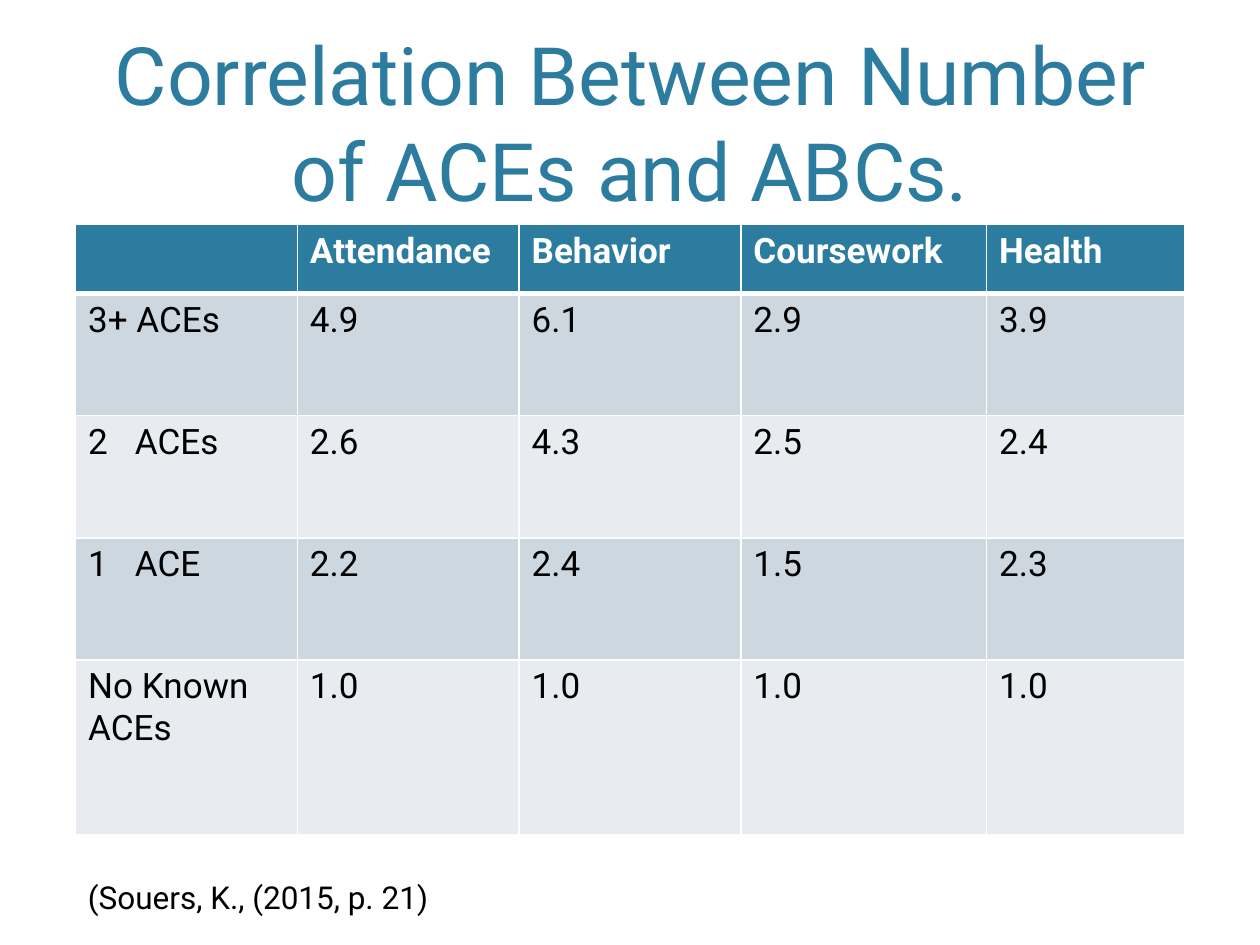
from lxml import etree
from pptx import Presentation
from pptx.dml.color import RGBColor
from pptx.enum.text import MSO_ANCHOR, MSO_AUTO_SIZE, PP_ALIGN
from pptx.oxml.ns import qn
from pptx.util import Inches, Pt

FONT = "Roboto"
TEAL = RGBColor(0x2C, 0x7C, 0x9F)
BAND_DARK = RGBColor(0xCD, 0xD7, 0xDF)
BAND_LIGHT = RGBColor(0xE8, 0xEC, 0xF0)
WHITE = RGBColor(0xFF, 0xFF, 0xFF)
BLACK = RGBColor(0x00, 0x00, 0x00)

LEFT, WIDTH = 0.6, 8.8
COL_WIDTHS = [1.76, 1.76, 1.76, 1.95, 1.57]
ROW_HEIGHTS = [0.55, 0.97, 0.97, 0.97, 1.39]
ROWS = [
    ["", "Attendance", "Behavior", "Coursework", "Health"],
    ["3+ ACEs", "4.9", "6.1", "2.9", "3.9"],
    ["2\tACEs", "2.6", "4.3", "2.5", "2.4"],
    ["1\tACE", "2.2", "2.4", "1.5", "2.3"],
    ["No Known ACEs", "1.0", "1.0", "1.0", "1.0"],
]


def write(tf, text, size, color, bold=False):
    """Put one formatted run in the first paragraph and return the paragraph."""
    p = tf.paragraphs[0]
    r = p.add_run()
    r.text = text
    for name, value in {"name": FONT, "size": Pt(size), "bold": bold}.items():
        setattr(r.font, name, value)
    r.font.color.rgb = color
    return p


def add_tab_stop(p, pos):
    tabs = etree.SubElement(p._p.get_or_add_pPr(), qn("a:tabLst"))
    etree.SubElement(tabs, qn("a:tab"), pos=str(pos), algn="l")


def set_borders(cell, widths):
    """Draw white borders; widths maps a side (L, R, T, B) to points."""
    tc_pr = cell._tc.get_or_add_tcPr()
    for i, (side, width) in enumerate(widths.items()):
        ln = etree.Element(qn(f"a:ln{side}"), w=str(Pt(width)))
        fill = etree.SubElement(ln, qn("a:solidFill"))
        etree.SubElement(fill, qn("a:srgbClr"), val=str(WHITE))
        tc_pr.insert(i, ln)


def add_title(s, box):
    sp = s.shapes.title
    sp.left, sp.top, sp.width, sp.height = map(Inches, box)
    tf = sp.text_frame
    formats = {"word_wrap": True, "auto_size": MSO_AUTO_SIZE.NONE,
               "vertical_anchor": MSO_ANCHOR.BOTTOM}
    for name, value in formats.items():
        setattr(tf, name, value)
    p = write(tf, "Correlation Between Number of ACEs and ABCs.", 46, TEAL)
    p.alignment = PP_ALIGN.CENTER


def add_score_table(s, box):
    table = s.shapes.add_table(len(ROWS), len(COL_WIDTHS), *map(Inches, box)).table
    for col, width in zip(table.columns, COL_WIDTHS):
        col.width = Inches(width)
    for row, height in zip(table.rows, ROW_HEIGHTS):
        row.height = Inches(height)

    for i, row in enumerate(ROWS):
        header = i == 0
        band = TEAL if header else (BAND_LIGHT, BAND_DARK)[i % 2]
        for j, text in enumerate(row):
            cell = table.cell(i, j)
            cell.fill.solid()
            cell.fill.fore_color.rgb = band
            set_borders(cell, {"L": 1, "R": 1, "T": 3 if i == 1 else 1,
                               "B": 3 if header else 1})
            if text:
                p = write(cell.text_frame, text, 20, WHITE if header else BLACK, header)
                if "\t" in text:
                    add_tab_stop(p, Inches(0.37))


def add_citation(s, box):
    tf = s.shapes.add_textbox(*map(Inches, box)).text_frame
    tf.word_wrap = True
    tf.auto_size = MSO_AUTO_SIZE.SHAPE_TO_FIT_TEXT
    write(tf, "(Souers, K., (2015, p. 21)", 18, BLACK)


def main():
    prs = Presentation()
    prs.slide_width, prs.slide_height = Inches(10), Inches(7.5)
    s = prs.slides.add_slide(prs.slide_layouts[5])  # Title Only
    add_title(s, (LEFT, 0.12, WIDTH, 1.66))
    add_score_table(s, (LEFT, 1.78, WIDTH, sum(ROW_HEIGHTS)))
    add_citation(s, (LEFT, 6.92, WIDTH, 0.4))
    prs.save("out.pptx")


if __name__ == "__main__":
    main()
